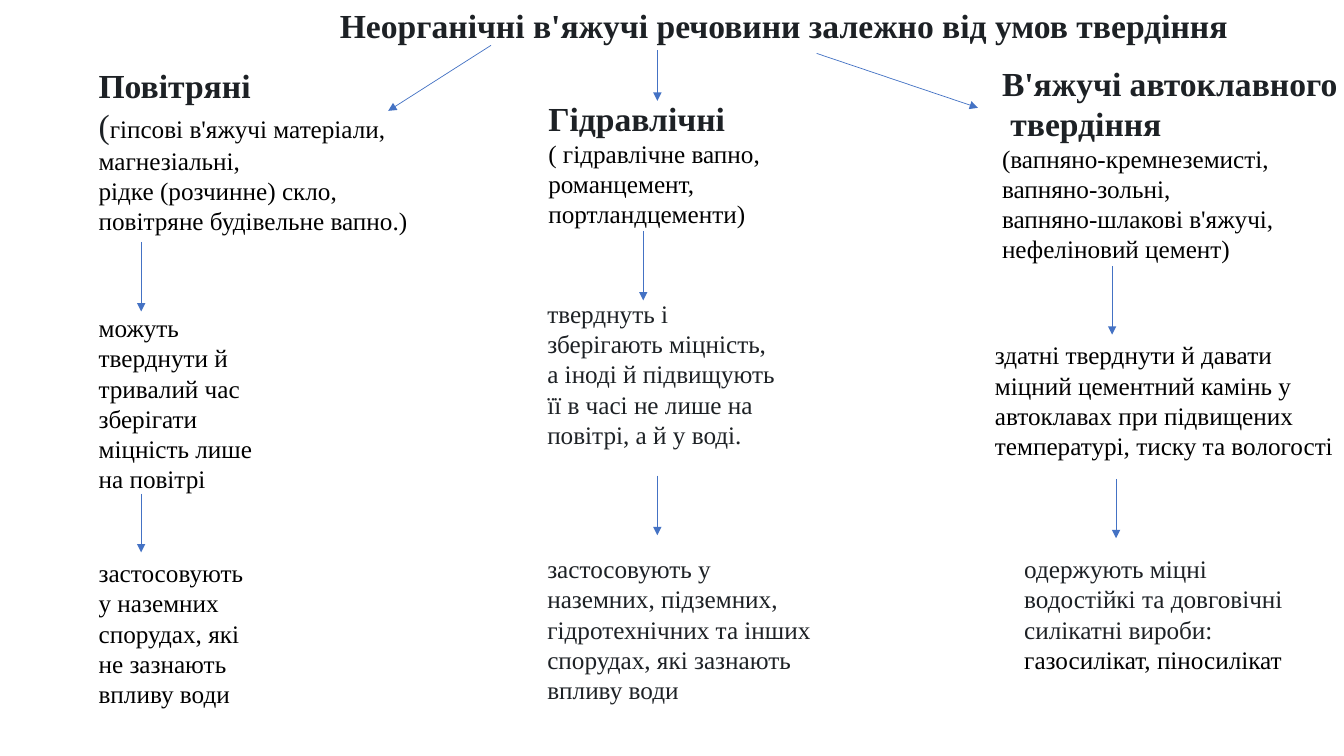
from dataclasses import dataclass

from lxml import etree
from pptx import Presentation
from pptx.dml.color import RGBColor
from pptx.enum import shapes, text
from pptx.oxml import ns
from pptx.util import Inches, Pt

FONT = "Times New Roman"
DARK = RGBColor(0x1D, 0x21, 0x25)
BLACK = RGBColor(0, 0, 0)
BLUE = RGBColor(0x44, 0x72, 0xC4)


@dataclass(frozen=True)
class Run:
    text: str
    color: RGBColor = BLACK
    size: int = 18
    bold: bool = False


@dataclass(frozen=True)
class Block:
    left: float
    top: float
    width: float
    height: float
    paragraphs: list[list[Run]]
    wrap: bool = True


@dataclass(frozen=True)
class Arrow:
    x1: float
    y1: float
    x2: float
    y2: float


def heading(words: str) -> list[Run]:
    return [Run(words, DARK, 24, True)]


def lines(*words: str, color: RGBColor = BLACK) -> list[list[Run]]:
    """Make one single-run paragraph per line."""
    return [[Run(w, color)] for w in words]


TITLE = Block(3.27, 0, 9.09, 0.5, [
    heading("Неорганічні в'яжучі речовини залежно від умов твердіння")], wrap=False)

AIR = [
    Block(0.88, 0.59, 3.3, 1.82, [
        heading("Повітряні"),
        [Run("(", DARK, 24), Run("гіпсові в'яжучі матеріали,")],
        *lines("магнезіальні,", "рідке (розчинне) скло,",
               "повітряне будівельне вапно.)")], wrap=False),
    Block(0.88, 3.05, 1.94, 1.92, lines(
        "можуть тверднути й тривалий час зберігати міцність лише на повітрі")),
    Block(0.88, 5.48, 1.74, 1.62, lines(
        "застосовують у наземних спорудах, які не зазнають впливу води")),
]

HYDRAULIC = [
    Block(5.34, 0.92, 2.53, 1.41, [
        heading("Гідравлічні"),
        *lines("( гідравлічне вапно,", "романцемент,", "портландцементи)")]),
    Block(5.33, 2.91, 2.53, 1.62, lines(
        "тверднуть і зберігають міцність, а іноді й підвищують її в часі "
        "не лише на повітрі, а й у воді.", color=DARK)),
    Block(5.33, 5.44, 2.85, 1.62, lines(
        "застосовують у наземних, підземних, гідротехнічних та інших "
        "спорудах, які зазнають впливу води", color=DARK)),
]

AUTOCLAVE = [
    Block(9.84, 0.57, 3.56, 2.12, [
        heading("В'яжучі автоклавного"),
        heading(" твердіння"),
        *lines("(вапняно-кремнеземисті,", "вапняно-зольні,",
               "вапняно-шлакові в'яжучі,", "нефеліновий цемент)")], wrap=False),
    Block(9.77, 3.32, 3.56, 1.31, lines(
        "здатні тверднути й давати міцний цементний камінь у автоклавах "
        "при підвищених температурі, тиску та вологості")),
    Block(10.06, 5.44, 3.12, 1.31, [
        *lines("одержують міцні водостійкі та довговічні силікатні вироби:",
               color=DARK),
        *lines("газосилікат, піносилікат")]),
]

ARROWS = [
    Arrow(4.87, 0.45, 3.85, 1.1), Arrow(6.52, 0.5, 6.52, 1), Arrow(8.1, 0.53, 9.7, 1.07),
    Arrow(1.4, 2.4, 1.4, 3.09), Arrow(1.4, 4.9, 1.4, 5.48),
    Arrow(6.38, 2.29, 6.38, 2.98), Arrow(6.52, 4.72, 6.52, 5.31),
    Arrow(11.03, 2.64, 11.03, 3.32), Arrow(11.07, 4.75, 11.07, 5.34),
]


def fill_block(sp, block: Block) -> None:
    """Place a text shape and write its paragraphs."""
    sp.left, sp.top = Inches(block.left), Inches(block.top)
    sp.width, sp.height = Inches(block.width), Inches(block.height)
    tf = sp.text_frame
    tf.word_wrap = block.wrap
    tf.auto_size = text.MSO_AUTO_SIZE.SHAPE_TO_FIT_TEXT
    tf.vertical_anchor = text.MSO_ANCHOR.TOP
    for i, runs in enumerate(block.paragraphs):
        p = tf.add_paragraph() if i else tf.paragraphs[0]
        p.alignment = text.PP_ALIGN.LEFT
        for run in runs:
            r = p.add_run()
            r.text = run.text
            r.font.name = FONT
            r.font.size = Pt(run.size)
            r.font.bold = run.bold
            r.font.color.rgb = run.color


def add_arrow(s, arrow: Arrow) -> None:
    line = s.shapes.add_connector(
        shapes.MSO_CONNECTOR.STRAIGHT, Inches(arrow.x1), Inches(arrow.y1),
        Inches(arrow.x2), Inches(arrow.y2))
    line.line.color.rgb = BLUE
    line.line.width = Pt(0.5)
    ln = line.line._get_or_add_ln()
    etree.SubElement(ln, ns.qn("a:tailEnd"), type="triangle")
    etree.SubElement(line._element.spPr, ns.qn("a:effectLst"))


def main() -> None:
    prs = Presentation()
    prs.slide_width, prs.slide_height = Inches(13.33), Inches(7.5)
    s = prs.slides.add_slide(prs.slide_layouts.get_by_name("Title Only"))
    fill_block(s.shapes.title, TITLE)
    for block in AIR + HYDRAULIC + AUTOCLAVE:
        fill_block(s.shapes.add_textbox(0, 0, 0, 0), block)
    for arrow in ARROWS:
        add_arrow(s, arrow)
    prs.save("out.pptx")


if __name__ == "__main__":
    main()
